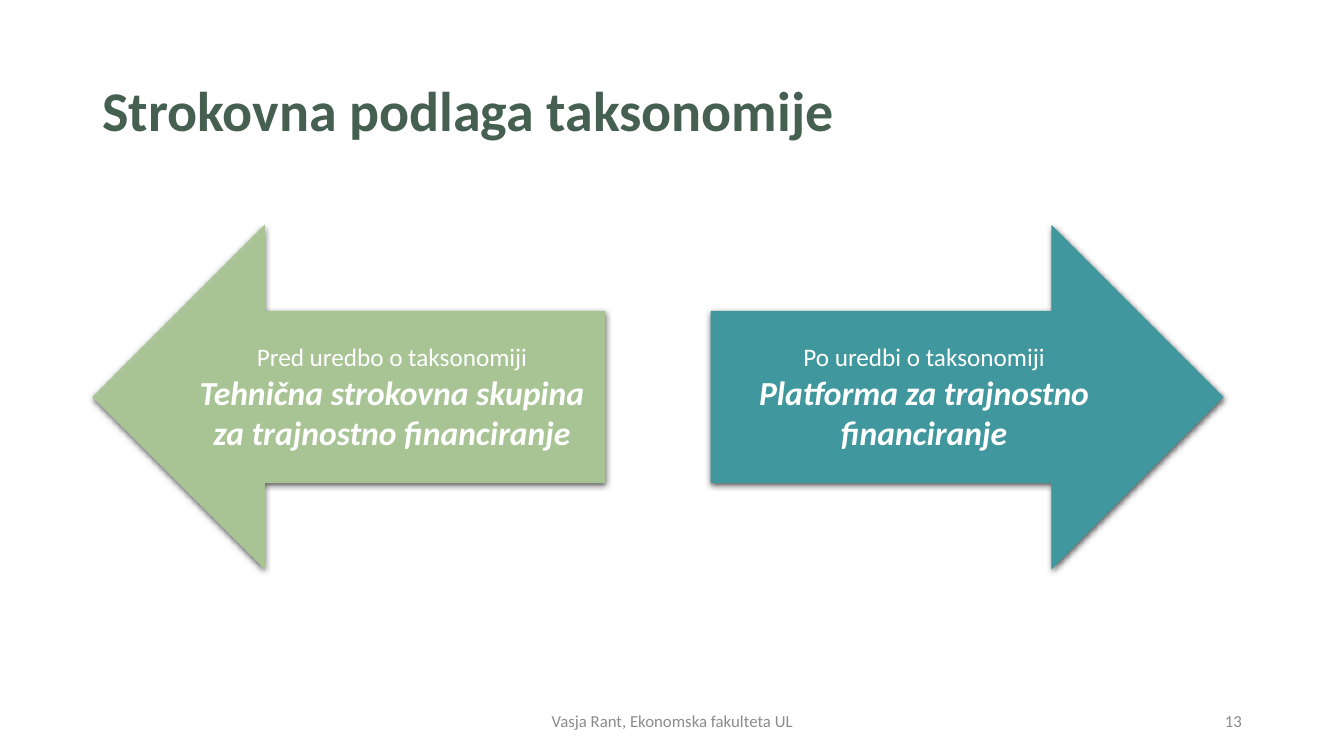
from dataclasses import dataclass

from lxml.etree import SubElement
from pptx import Presentation
from pptx.dml.color import RGBColor
from pptx.enum.shapes import MSO_SHAPE
from pptx.enum.text import MSO_ANCHOR, MSO_AUTO_SIZE, PP_ALIGN
from pptx.oxml.ns import qn
from pptx.util import Cm, Pt


@dataclass(frozen=True)
class Theme:
    """Colours and type sizes of the deck."""

    font: str = "Calibri"
    title: str = "455F51"
    before: str = "A8C494"
    after: str = "40979D"
    light: str = "FFFFFF"
    muted: str = "8C8C8C"
    shadow: str = "000000"
    title_size: int = 40
    name_size: int = 24
    label_size: int = 18
    footer_size: int = 12


class Page:
    """Holds the theme and the current slide."""

    def __init__(self, deck, theme):
        """Add a title-only slide to the deck."""
        self.theme = theme
        self.slide = deck.slides.add_slide(deck.slide_layouts[5])

    def set_lines(self, frame, lines, align):
        """Fill a text frame with lines of text, size, colour and emphasis flags."""
        frame.word_wrap = True
        frame.auto_size = MSO_AUTO_SIZE.NONE
        frame.vertical_anchor = MSO_ANCHOR.MIDDLE
        frame.text = "\n".join(line[0] for line in lines)
        for paragraph, (_, size, color, bold, italic) in zip(frame.paragraphs, lines):
            paragraph.alignment = align
            for span in paragraph.runs:
                span.font.name = self.theme.font
                span.font.size = Pt(size)
                span.font.bold = bold
                span.font.italic = italic
                span.font.color.rgb = RGBColor.from_string(color)

    def title(self, text, left, top, width, height):
        """Place and format the title placeholder."""
        box = self.slide.shapes.title
        box.left, box.top, box.width, box.height = map(Cm, (left, top, width, height))
        line = (text, self.theme.title_size, self.theme.title, True, False)
        self.set_lines(box.text_frame, [line], PP_ALIGN.LEFT)
        box.text_frame.paragraphs[0].line_spacing = 0.9

    def arrow(self, kind, left, color, label, name):
        """Draw a block arrow with a label above a name."""
        theme = self.theme
        box = self.slide.shapes.add_shape(kind, Cm(left), Cm(5.66), Cm(12.93), Cm(8.69))
        box.fill.solid()
        box.fill.fore_color.rgb = RGBColor.from_string(color)
        box.line.fill.background()
        self.cast_shadow(box)
        lines = [
            (label, theme.label_size, theme.light, False, False),
            (name, theme.name_size, theme.light, True, True),
        ]
        self.set_lines(box.text_frame, lines, PP_ALIGN.CENTER)

    def cast_shadow(self, box):
        """Give a shape a soft shadow straight below it."""
        box.shadow.inherit = False
        effects = box.element.spPr.find(qn("a:effectLst"))
        shadow = SubElement(
            effects, qn("a:outerShdw"), blurRad=str(Pt(4.5)), dist=str(Pt(1.5)),
            dir="5400000", algn="ctr", rotWithShape="0",
        )
        color = SubElement(shadow, qn("a:srgbClr"), val=self.theme.shadow)
        SubElement(color, qn("a:alpha"), val="63000")

    def footer(self, text, left, width, align):
        """Add a small muted text at the foot of the slide."""
        box = self.slide.shapes.add_textbox(Cm(left), Cm(17.65), Cm(width), Cm(1.01))
        line = (text, self.theme.footer_size, self.theme.muted, False, False)
        self.set_lines(box.text_frame, [line], align)


def main():
    """Build and save the deck."""
    theme = Theme()
    deck = Presentation()
    deck.slide_width, deck.slide_height = Cm(33.87), Cm(19.05)
    page = Page(deck, theme)
    page.title("Strokovna podlaga taksonomije", 2.33, 1.02, 29.21, 3.68)
    page.arrow(MSO_SHAPE.RIGHT_ARROW, 17.91, theme.after,
               "Po uredbi o taksonomiji", "Platforma za trajnostno financiranje")
    page.arrow(MSO_SHAPE.LEFT_ARROW, 2.33, theme.before,
               "Pred uredbo o taksonomiji",
               "Tehnična strokovna skupina za trajnostno financiranje")
    page.footer("13", 23.93, 7.62, PP_ALIGN.RIGHT)
    page.footer("Vasja Rant, Ekonomska fakulteta UL", 11.23, 11.43, PP_ALIGN.CENTER)
    deck.save("out.pptx")


if __name__ == "__main__":
    main()
